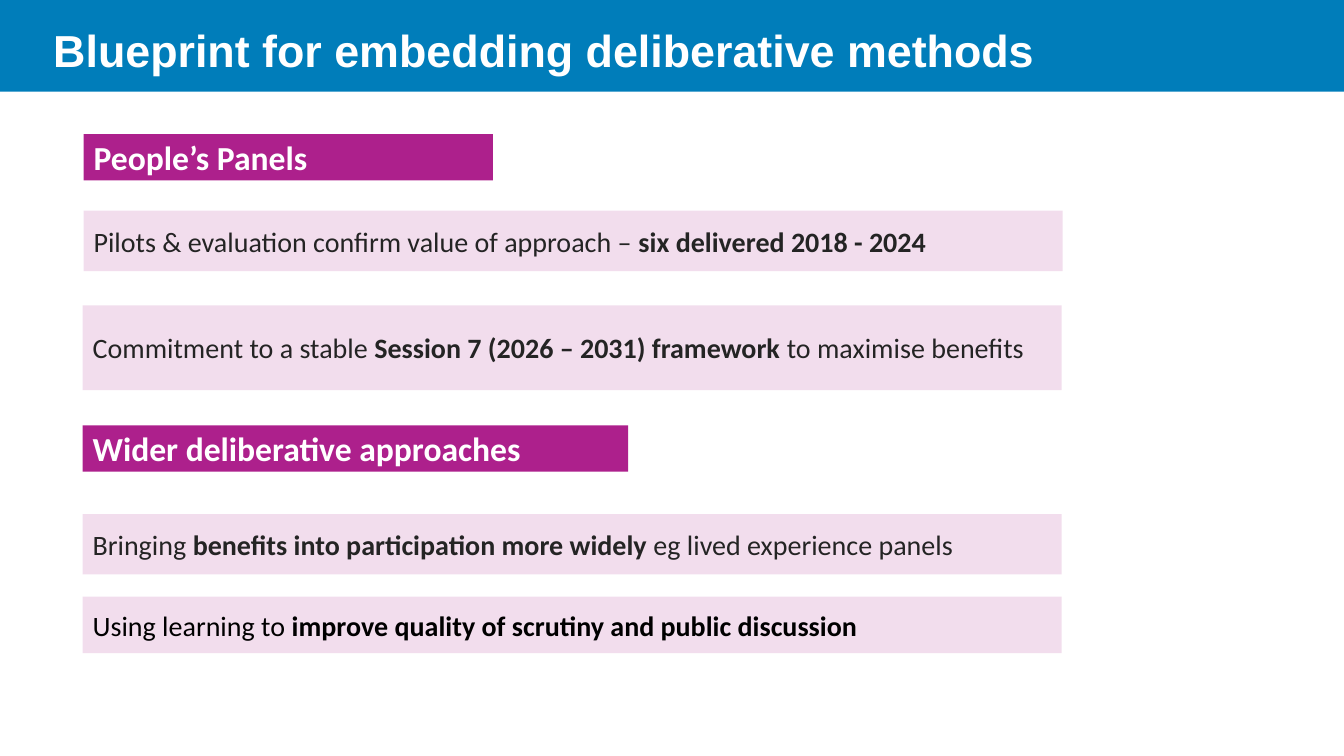
from lxml import etree
from pptx import Presentation
from pptx.dml.color import RGBColor
from pptx.enum.shapes import MSO_SHAPE
from pptx.enum.text import MSO_ANCHOR, PP_ALIGN
from pptx.oxml.ns import qn
from pptx.util import Inches, Pt

BLUE, MAGENTA, WHITE, DARK, BLACK = "007DBA", "AD208C", "FFFFFF", "242424", "000000"
BAR_WIDTH = 9.71


def rgb(value):
    return RGBColor.from_string(value)


def add_box(slide, box, fill, alpha=None):
    s = slide.shapes.add_shape(MSO_SHAPE.RECTANGLE, *map(Inches, box))
    s.shadow.inherit = False
    s.fill.solid()
    s.fill.fore_color.rgb = rgb(fill)
    s.line.fill.background()
    if alpha is not None:
        clr = s.fill._xPr.find(qn("a:solidFill")).find(qn("a:srgbClr"))
        etree.SubElement(clr, qn("a:alpha")).set("val", str(alpha * 1000))
    return s


def write(s, runs, size, color, font="Calibri"):
    """Fill a shape with one left-aligned line of (text, bold) runs."""
    tf = s.text_frame
    tf.word_wrap = True
    tf.vertical_anchor = MSO_ANCHOR.MIDDLE
    p = tf.paragraphs[0]
    p.alignment = PP_ALIGN.LEFT
    for text, bold in runs:
        r = p.add_run()
        r.text = text
        r.font.name = font
        r.font.size = Pt(size)
        r.font.bold = bold
        r.font.color.rgb = rgb(color)


def add_title(slide, box, text):
    left, top, width, height = box
    add_box(slide, box, BLUE)
    s = slide.shapes.add_textbox(Inches(left + 0.43), Inches(top + 0.04),
                                 Inches(11.14), Inches(height))
    write(s, [(text, True)], 32, WHITE, "Arial")


def add_section(slide, box, heading, bars):
    """Heading box, then tinted bars at (offset, height, colour, runs)."""
    left, top, width, height = box
    write(add_box(slide, box, MAGENTA), [(heading, True)], 24, WHITE)
    for dx, dy, bar_height, color, runs in bars:
        bar = add_box(slide, (left + dx, top + dy, BAR_WIDTH, bar_height), MAGENTA, 15)
        write(bar, runs, 20, color)


def main():
    prs = Presentation()
    prs.slide_width, prs.slide_height = Inches(13.33), Inches(7.5)
    slide = prs.slides.add_slide(prs.slide_layouts[6])

    # Title band
    add_title(slide, (0, 0, 13.33, 0.91), "Blueprint for embedding deliberative methods")

    # People's panels
    add_section(slide, (0.83, 1.33, 4.06, 0.46), "People’s Panels", [
        (0, 0.76, 0.6, DARK, [("Pilots & evaluation confirm value of approach – ", False),
                              ("six delivered 2018 - 2024", True)]),
        (-0.01, 1.7, 0.84, DARK, [("Commitment to a stable ", False),
                                  ("Session 7 (2026 – 2031) framework ", True),
                                  ("to maximise benefits", False)]),
    ])

    # Wider approaches
    add_section(slide, (0.82, 4.22, 5.41, 0.46), "Wider deliberative approaches", [
        (0, 0.88, 0.6, DARK, [("Bringing ", False),
                              ("benefits into participation more widely ", True),
                              ("eg lived experience panels", False)]),
        (0, 1.7, 0.56, BLACK, [("Using learning to ", False),
                               ("improve quality of scrutiny and public discussion", True)]),
    ])

    prs.save("out.pptx")


if __name__ == "__main__":
    main()
